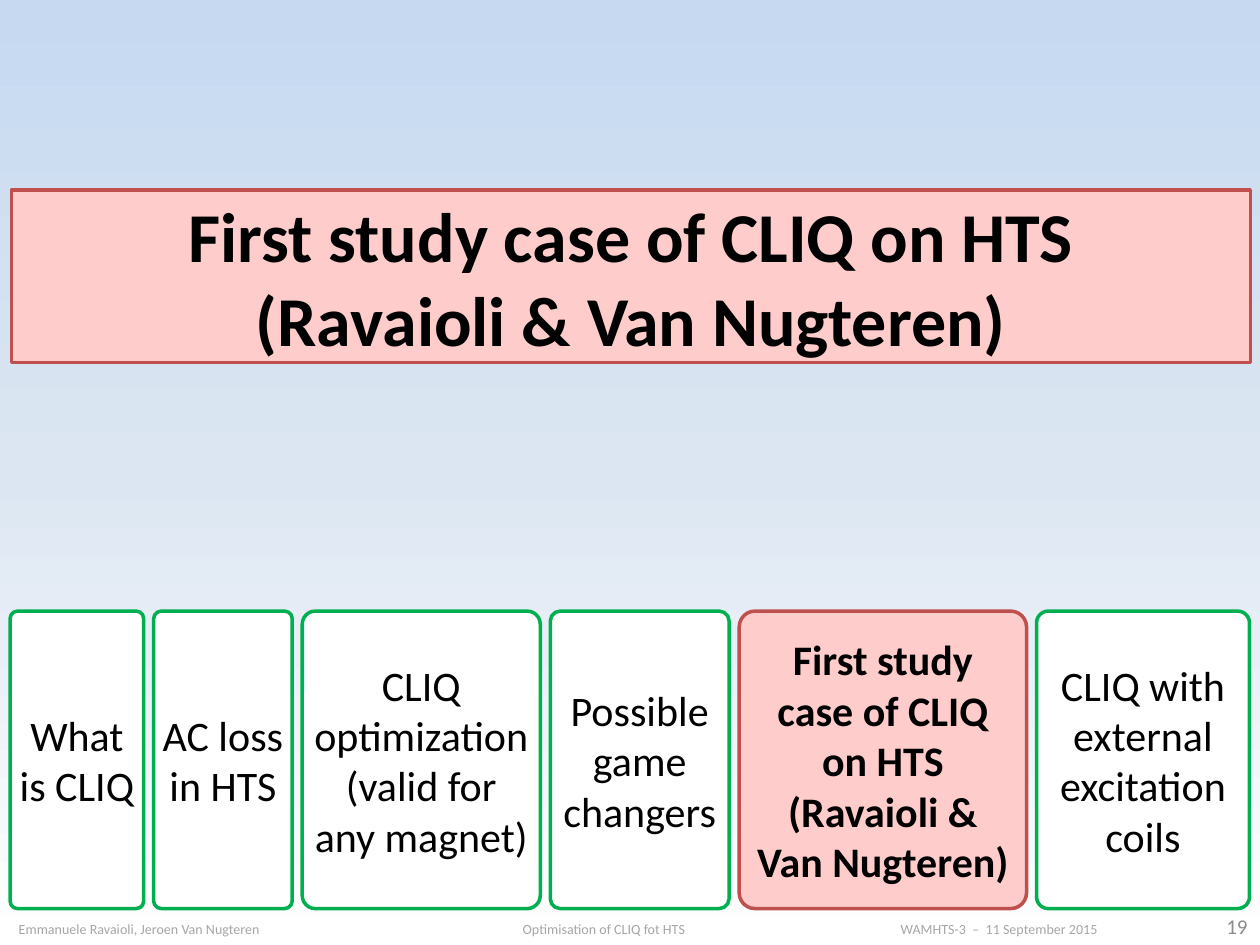
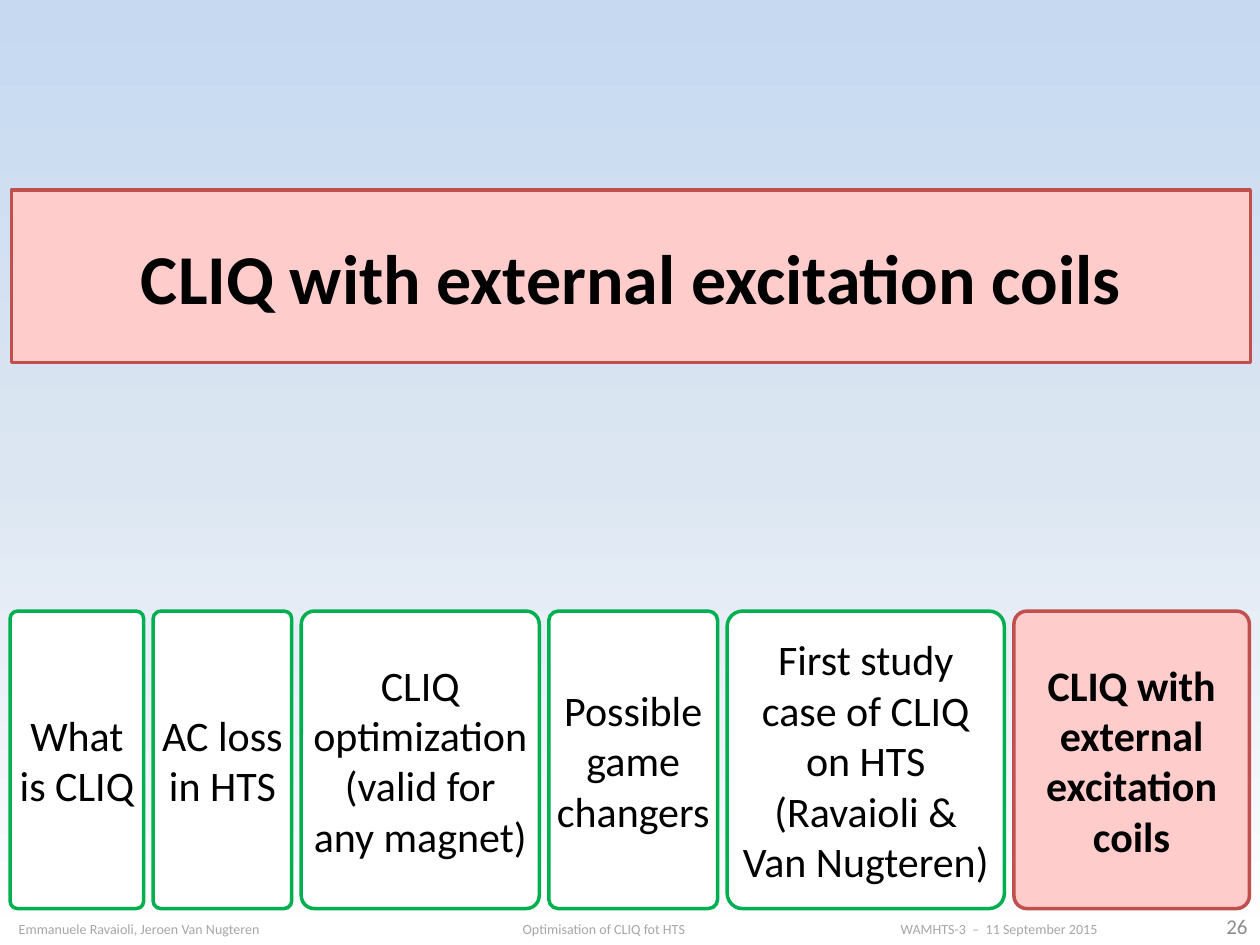
from copy import deepcopy
from dataclasses import dataclass

from pptx import Presentation
from pptx.dml.color import RGBColor
from pptx.enum.shapes import MSO_SHAPE
from pptx.enum.text import MSO_ANCHOR, MSO_AUTO_SIZE, PP_ALIGN
from pptx.oxml.ns import qn
from pptx.util import Pt
from lxml import etree

ROUNDED = MSO_SHAPE.ROUNDED_RECTANGLE
MIDDLE = MSO_ANCHOR.MIDDLE
NO_AUTOFIT = MSO_AUTO_SIZE.NONE
LEFT, CENTER, RIGHT = PP_ALIGN.LEFT, PP_ALIGN.CENTER, PP_ALIGN.RIGHT
TITLE_ONLY = 5


@dataclass(frozen=True)
class Theme:
    font: str = "Calibri"
    title_size: float = 40
    stage_size: float = 24
    number_size: float = 12
    footer_size: float = 8
    text: str = "000000"
    number: str = "8C8C8C"
    footer: str = "A6A6A6"
    active_fill: str = "FFCCCC"
    active_line: str = "C0504D"
    stage_fill: str = "FFFFFF"
    stage_line: str = "00B050"
    line_width: float = 2
    background: tuple = ("C6D9F1", "DCE6F2", "FFFFFF")


THEME = Theme()

# Row of stages along the foot of each slide
ROW_LEFT, ROW_RIGHT, ROW_TOP, ROW_HEIGHT = 5.8, 714, 349.2, 170
STAGES = [
    "What is CLIQ",
    "AC loss in HTS",
    "CLIQ optimization (valid for any magnet)",
    "Possible\ngame changers",
    "First study case of CLIQ on HTS\n(Ravaioli &\nVan Nugteren)",
    "CLIQ with external excitation coils",
]
FOOTER = ("Emmanuele Ravaioli, Jeroen Van Nugteren",
          "Optimisation of CLIQ fot HTS",
          "WAMHTS-3  –  11 September 2015")
FOOTER_TABS = (Pt(288), Pt(504))

# Title, slide number, index of the active stage, stage widths
SECTIONS = [
    ("First study case of CLIQ on HTS\n(Ravaioli & Van Nugteren)", 19, 4,
     (76.3, 79.2, 136, 102.2, 164.2, 121.7)),
    ("CLIQ with external excitation coils", 26, 5,
     (76.3, 79.2, 136, 96.5, 158.4, 134.6)),
]


def color(value):
    return RGBColor.from_string(value)


def set_background(master):
    """Vertical gradient with evenly spaced stops."""
    fill = master.background.fill
    fill.gradient()
    fill.gradient_angle = 270
    stop_list = master.element.find(".//" + qn("a:gsLst"))
    stop_list.append(deepcopy(stop_list[-1]))
    last = len(THEME.background) - 1
    for index, (stop, value) in enumerate(zip(fill.gradient_stops, THEME.background)):
        stop.position = index / last
        stop.color.rgb = color(value)


def write_text(shape, text, size, text_color, align, bold=False, inset=7.2):
    frame = shape.text_frame
    frame.text = text
    frame.word_wrap = True
    frame.auto_size = NO_AUTOFIT
    frame.vertical_anchor = MIDDLE
    frame.margin_left = frame.margin_right = Pt(inset)
    frame.margin_top = frame.margin_bottom = Pt(3.6)
    for paragraph in frame.paragraphs:
        paragraph.alignment = align
        paragraph.font.name = THEME.font
        paragraph.font.size = Pt(size)
        paragraph.font.bold = bold
        paragraph.font.color.rgb = color(text_color)


def paint(shape, active):
    shape.fill.solid()
    shape.fill.fore_color.rgb = color(THEME.active_fill if active else THEME.stage_fill)
    shape.line.color.rgb = color(THEME.active_line if active else THEME.stage_line)
    shape.line.width = Pt(THEME.line_width)


def add_title(slide, text):
    title = slide.shapes.title
    title.left, title.top, title.width, title.height = Pt(6.5), Pt(108.7), Pt(708), Pt(98.6)
    paint(title, active=True)
    write_text(title, text, THEME.title_size, THEME.text, CENTER, bold=True)


def add_footer(slide, number):
    number_box = slide.shapes.add_textbox(Pt(677.5), Pt(519), Pt(42.5), Pt(20))
    write_text(number_box, str(number), THEME.number_size, THEME.number, RIGHT)

    footer_box = slide.shapes.add_textbox(Pt(3.6), Pt(525), Pt(708), Pt(12))
    write_text(footer_box, "\t".join(FOOTER), THEME.footer_size, THEME.footer, LEFT)
    # Tab stops come before the default run properties
    properties = footer_box.text_frame.paragraphs[0]._p.get_or_add_pPr()
    tab_list = etree.Element(qn("a:tabLst"))
    for position in FOOTER_TABS:
        etree.SubElement(tab_list, qn("a:tab"), pos=str(position), algn="l")
    properties.find(qn("a:defRPr")).addprevious(tab_list)


def add_stage(slide, text, left, width, active):
    stage = slide.shapes.add_shape(ROUNDED, Pt(left), Pt(ROW_TOP), Pt(width), Pt(ROW_HEIGHT))
    stage.adjustments[0] = 0.055
    stage.shadow.inherit = False
    paint(stage, active)
    write_text(stage, text, THEME.stage_size, THEME.text, CENTER,
               bold=active, inset=7.2 if active else 2.8)


def add_stage_row(slide, active_index, widths):
    """Spread the stages over the row with equal gaps."""
    gap = (ROW_RIGHT - ROW_LEFT - sum(widths)) / (len(widths) - 1)
    left = ROW_LEFT
    for index, (text, width) in enumerate(zip(STAGES, widths)):
        add_stage(slide, text, left, width, index == active_index)
        left += width + gap


def main():
    presentation = Presentation()
    presentation.slide_width, presentation.slide_height = Pt(720), Pt(540)
    set_background(presentation.slide_master)
    for title, number, active_index, widths in SECTIONS:
        slide = presentation.slides.add_slide(presentation.slide_layouts[TITLE_ONLY])
        add_title(slide, title)
        add_footer(slide, number)
        add_stage_row(slide, active_index, widths)
    presentation.save("out.pptx")


if __name__ == "__main__":
    main()
